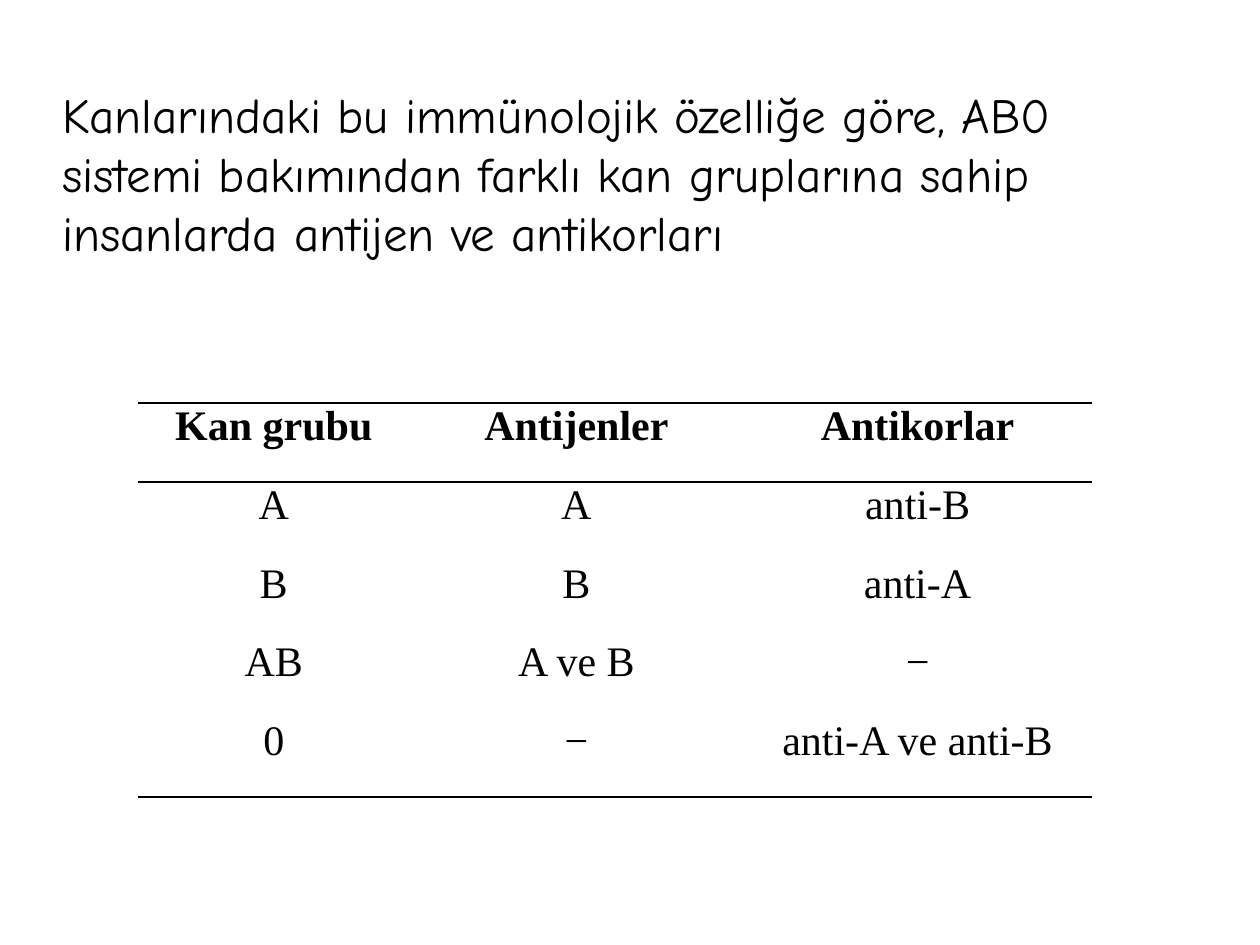
from lxml import etree
from pptx import Presentation
from pptx.dml.color import RGBColor
from pptx.enum.text import MSO_ANCHOR, MSO_AUTO_SIZE, PP_ALIGN
from pptx.oxml.ns import qn
from pptx.util import Pt

BLACK = RGBColor(0, 0, 0)
LEFT, CENTER = PP_ALIGN.LEFT, PP_ALIGN.CENTER
TOP = MSO_ANCHOR.TOP
NO_AUTO_SIZE = MSO_AUTO_SIZE.NONE
TITLE_ONLY = 5

TITLE = (
    "Kanlarındaki bu immünolojik özelliğe göre, AB0 sistemi bakımından "
    "farklı kan gruplarına sahip insanlarda antijen ve antikorları"
)
BLOOD_GROUPS = [
    ("Kan grubu", "Antijenler", "Antikorlar"),
    ("A", "A", "anti-B"),
    ("B", "B", "anti-A"),
    ("AB", "A ve B", "−"),
    ("0", "−", "anti-A ve anti-B"),
]


class SlideBuilder:
    title_font = "Comic Neue"
    table_font = "Times New Roman"
    title_size = 28
    table_size = 24
    rule_width = 1

    def __init__(self, slide):
        self.slide = slide

    def format_paragraph(self, paragraph, font_name, size, alignment, bold=False):
        paragraph.alignment = alignment
        paragraph.font.name = font_name
        paragraph.font.size = Pt(size)
        paragraph.font.bold = bold
        paragraph.font.color.rgb = BLACK

    def title(self, text, left, top, width, height):
        shape = self.slide.shapes.title
        shape.left, shape.top = Pt(left), Pt(top)
        shape.width, shape.height = Pt(width), Pt(height)
        frame = shape.text_frame
        frame.text = text
        frame.word_wrap = True
        frame.auto_size = NO_AUTO_SIZE
        frame.vertical_anchor = TOP
        paragraph = frame.paragraphs[0]
        paragraph.line_spacing = 1.0
        paragraph.space_before = Pt(0)
        self.format_paragraph(paragraph, self.title_font, self.title_size, LEFT)

    def cell_borders(self, cell, ruled_sides):
        properties = cell._tc.get_or_add_tcPr()
        for position, side in enumerate(("L", "R", "T", "B")):
            line = etree.Element(qn(f"a:ln{side}"))
            if side in ruled_sides:
                line.set("w", str(Pt(self.rule_width)))
                fill = etree.SubElement(line, qn("a:solidFill"))
                etree.SubElement(fill, qn("a:srgbClr"), val=str(BLACK))
            else:
                etree.SubElement(line, qn("a:noFill"))
            properties.insert(position, line)

    def table(self, rows, left, top, column_widths, row_height):
        table = self.slide.shapes.add_table(
            len(rows), len(column_widths), Pt(left), Pt(top),
            Pt(sum(column_widths)), Pt(row_height * len(rows)),
        ).table
        table.first_row = table.horz_banding = False
        for column, width in zip(table.columns, column_widths):
            column.width = Pt(width)
        ruled_sides = {0: "TB", 1: "T", len(rows) - 1: "B"}
        for row_index, values in enumerate(rows):
            table.rows[row_index].height = Pt(row_height)
            for column_index, value in enumerate(values):
                cell = table.cell(row_index, column_index)
                cell.text = value
                cell.fill.background()
                cell.vertical_anchor = TOP
                cell.margin_left = cell.margin_right = Pt(5)
                cell.margin_top = cell.margin_bottom = Pt(0)
                self.cell_borders(cell, ruled_sides.get(row_index, ""))
                self.format_paragraph(
                    cell.text_frame.paragraphs[0], self.table_font,
                    self.table_size, CENTER, bold=row_index == 0,
                )


def main():
    presentation = Presentation()
    presentation.slide_width, presentation.slide_height = Pt(720), Pt(540)
    slide = presentation.slides.add_slide(presentation.slide_layouts[TITLE_ONLY])
    builder = SlideBuilder(slide)
    builder.title(TITLE, 28.3, 44.8, 658, 109)
    builder.table(BLOOD_GROUPS, 78.7, 230.4, (155.5, 190.4, 199.6), 45)
    presentation.save("out.pptx")


if __name__ == "__main__":
    main()
